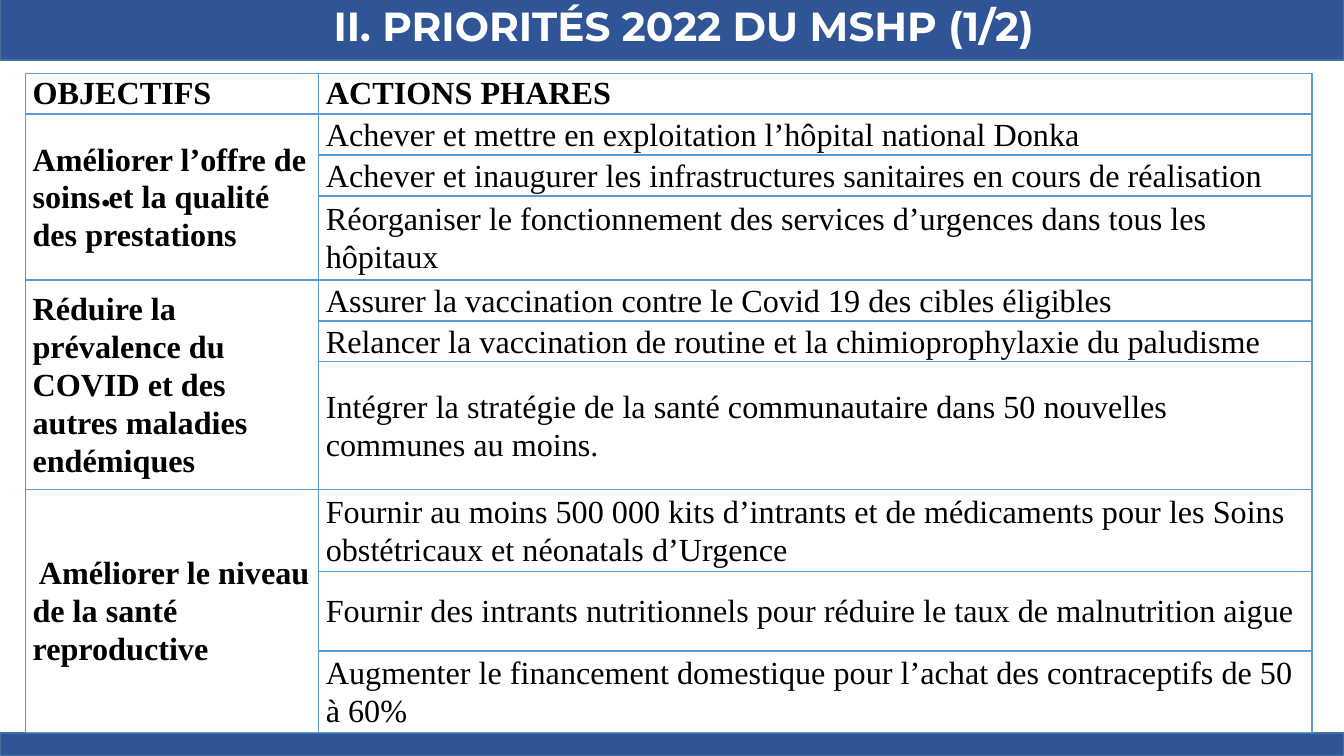
from lxml import etree
from pptx import Presentation
from pptx.dml.color import RGBColor
from pptx.enum.shapes import MSO_SHAPE
from pptx.enum.text import MSO_ANCHOR, PP_ALIGN
from pptx.oxml.ns import qn
from pptx.util import Pt

RECTANGLE = MSO_SHAPE.RECTANGLE
TOP, MIDDLE = MSO_ANCHOR.TOP, MSO_ANCHOR.MIDDLE
LEFT, CENTER = PP_ALIGN.LEFT, PP_ALIGN.CENTER

NAVY = RGBColor(0x2F, 0x55, 0x97)
EDGE = RGBColor(0x43, 0x73, 0x9E)
GRID = RGBColor(0x5B, 0x9B, 0xD5)
WHITE = RGBColor(0xFF, 0xFF, 0xFF)
BLACK = RGBColor(0, 0, 0)


def write(frame, text, font="Times New Roman", size=23, color=BLACK, bold=False,
          align=LEFT, anchor=MIDDLE, spacing=1.06, before=0, after=0):
    frame.word_wrap = True
    frame.vertical_anchor = anchor
    paragraph = frame.paragraphs[0]
    paragraph.alignment = align
    paragraph.line_spacing = spacing
    paragraph.space_before, paragraph.space_after = Pt(before), Pt(after)
    run = paragraph.add_run()
    run.text = text
    run.font.name, run.font.size, run.font.bold = font, Pt(size), bold
    run.font.color.rgb = color
    return paragraph


def set_borders(cell, widths):
    properties = cell._tc.get_or_add_tcPr()
    for position, (side, width) in enumerate(widths.items()):
        line = etree.Element(qn(f"a:{side}"), w=str(Pt(width)))
        fill = etree.SubElement(line, qn("a:solidFill"))
        etree.SubElement(fill, qn("a:srgbClr"), val=str(GRID))
        properties.insert(position, line)


presentation = Presentation()
presentation.slide_width, presentation.slide_height = Pt(960), Pt(540)
slide = presentation.slides.add_slide(presentation.slide_layouts[5])

# Title
title = slide.shapes.title
title.left, title.top, title.width, title.height = Pt(142.5), Pt(-3), Pt(700.5), Pt(46)
write(title.text_frame, "II. PRIORITÉS 2022 DU MSHP (1/2) ", font="Montserrat",
      size=29, color=WHITE, bold=True, align=CENTER, spacing=0.9)

# Bands at the top and bottom, behind the title
for top, height in ((-3, 46), (523.5, 16.5)):
    band = slide.shapes.add_shape(RECTANGLE, 0, Pt(top), Pt(960), Pt(height))
    band.shadow.inherit = False
    band.fill.solid()
    band.fill.fore_color.rgb = NAVY
    band.line.color.rgb = EDGE
    band.line.width = Pt(1)
    title.element.addprevious(band.element)

# Lone point behind the table
point = slide.shapes.add_textbox(Pt(63.5), Pt(109.5), Pt(859), Pt(218))
point_paragraph = write(point.text_frame, ".", font="Calibri", size=40, anchor=TOP,
                        spacing=0.9, before=10)
point_properties = point_paragraph._p.get_or_add_pPr()
point_properties.set("marL", str(Pt(18)))
point_properties.set("indent", str(Pt(-18)))

# Objectives and their key actions
priorities = [
    ("Améliorer l’offre de soins et la qualité des prestations", [
        ("Achever et mettre en exploitation l’hôpital national Donka", 29),
        ("Achever et inaugurer les infrastructures sanitaires en cours de réalisation", 28),
        ("Réorganiser le fonctionnement des services d’urgences dans tous les hôpitaux", 60),
    ]),
    ("Réduire la prévalence du COVID et des autres maladies endémiques", [
        ("Assurer la vaccination contre le Covid 19 des cibles éligibles", 28),
        ("Relancer la vaccination de routine et la chimioprophylaxie du paludisme", 28),
        ("Intégrer la stratégie de la santé communautaire dans 50 nouvelles "
         "communes au moins.", 91),
    ]),
    (" Améliorer le niveau de la santé reproductive", [
        ("Fournir au moins 500 000 kits d’intrants et de médicaments pour les Soins "
         "obstétricaux et néonatals d’Urgence", 58),
        ("Fournir des intrants nutritionnels pour réduire le taux de malnutrition aigue", 57),
        ("Augmenter le financement domestique pour l’achat des contraceptifs de 50 à 60%", 57),
    ]),
]
row_count = 1 + sum(len(actions) for _, actions in priorities)
table = slide.shapes.add_table(row_count, 2, Pt(18.25), Pt(52.25), Pt(919), Pt(465)).table
table.first_row = table.horz_banding = False
table.columns[0].width, table.columns[1].width = Pt(209.5), Pt(709.5)

# Cell format: thicker rule under the header
for row_number, row in enumerate(table.rows):
    for cell in row.cells:
        cell.margin_left = cell.margin_right = Pt(5)
        cell.margin_top = cell.margin_bottom = 0
        cell.vertical_anchor = MIDDLE if row_number else TOP
        cell.fill.background()
        set_borders(cell, {"lnL": 1, "lnR": 1, "lnT": 1 if row_number != 1 else 2,
                           "lnB": 1 if row_number else 2})

# Header
table.rows[0].height = Pt(29)
for column, heading in enumerate(("OBJECTIFS", "ACTIONS PHARES")):
    write(table.cell(0, column).text_frame, heading, bold=True, anchor=TOP, after=8)

# Body: each objective spans its actions
row_number = 1
for objective, actions in priorities:
    objective_cell = table.cell(row_number, 0)
    objective_cell.merge(table.cell(row_number + len(actions) - 1, 0))
    write(objective_cell.text_frame, objective, bold=True, after=8,
          before=36 if row_number == 1 else 0)
    for action, height in actions:
        table.rows[row_number].height = Pt(height)
        write(table.cell(row_number, 1).text_frame, action, after=8)
        row_number += 1

presentation.save("out.pptx")
